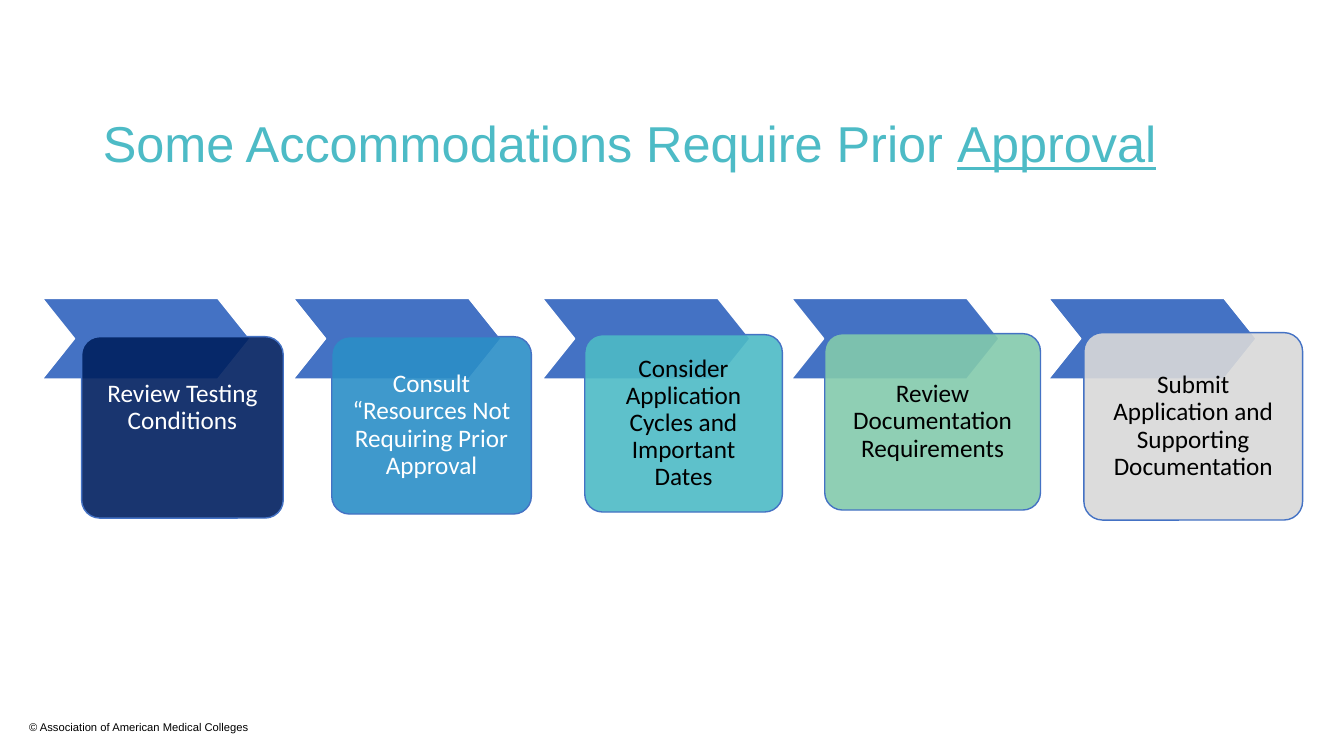
from lxml import etree
from pptx import Presentation
from pptx import util as u
from pptx.dml.color import RGBColor
from pptx.enum import shapes, text
from pptx.oxml.ns import qn

COLORS = {
    "teal": "4DBBC6", "blue": "4472C4", "navy": "002060", "sky": "2B8EC7",
    "green": "83CAAC", "grey": "D9D9D9", "white": "FFFFFF", "black": "000000",
}
CARD_INSET = 0.14
CHEVRON_TOP, CHEVRON_WIDTH, CHEVRON_HEIGHT = 2.96, 2.06, 0.8

# chevron left, card box, card colour, text colour, extra bottom inset, label
STEPS = [
    (0.42, (0.81, 3.34, 2.0, 1.8), "navy", "white", 0.38,
     "Review Testing Conditions"),
    (2.91, (3.29, 3.34, 1.98, 1.76), "sky", "white", 0,
     "Consult “Resources Not Requiring Prior Approval"),
    (5.38, (5.8, 3.32, 1.96, 1.76), "teal", "black", 0,
     "Consider Application Cycles and Important Dates"),
    (7.85, (8.18, 3.31, 2.14, 1.75), "green", "black", 0,
     "Review Documentation Requirements"),
    (10.4, (10.75, 3.3, 2.17, 1.86), "grey", "black", 0,
     "Submit Application and Supporting Documentation"),
]


def set_values(target, **values):
    for name, value in values.items():
        setattr(target, name, value)


class SlideBuilder:
    def __init__(self, slide):
        self.slide = slide

    def color(self, name):
        return RGBColor.from_string(COLORS[name])

    def place(self, shape, box):
        names = ("left", "top", "width", "height")
        set_values(shape, **dict(zip(names, map(u.Inches, box))))

    def style_font(self, font, color, **values):
        set_values(font, **values)
        font.color.rgb = self.color(color)

    def title(self, box, *runs):
        """Fill the title placeholder from (words, underline) pairs."""
        title = self.slide.shapes.title
        self.place(title, box)
        set_values(title.text_frame, word_wrap=True,
                   vertical_anchor=text.MSO_ANCHOR.MIDDLE)
        paragraph = title.text_frame.paragraphs[0]
        set_values(paragraph, alignment=text.PP_ALIGN.LEFT, line_spacing=0.9)
        for words, underline in runs:
            run = paragraph.add_run()
            run.text = words
            self.style_font(run.font, "teal", name="Arial", size=u.Pt(36),
                            underline=underline)

    def label(self, box, words):
        label = self.slide.shapes.add_textbox(*map(u.Inches, box))
        label.text_frame.word_wrap = True
        paragraph = label.text_frame.paragraphs[0]
        paragraph.text = words
        self.style_font(paragraph.font, "black", name="Arial", size=u.Pt(8))

    def shape(self, kind, box, adjustment, fill, line):
        shape = self.slide.shapes.add_shape(kind, *map(u.Inches, box))
        shape.adjustments[0] = adjustment
        shape.shadow.inherit = False
        shape.fill.solid()
        shape.fill.fore_color.rgb = self.color(fill)
        shape.line.color.rgb = self.color(line)
        shape.line.width = u.Pt(1)
        return shape

    def chevron(self, left):
        box = (left, CHEVRON_TOP, CHEVRON_WIDTH, CHEVRON_HEIGHT)
        self.shape(shapes.MSO_SHAPE.CHEVRON, box, 0.4, "blue", "white")

    def card(self, box, fill, text_color, extra_bottom, words):
        """Add a slightly see-through rounded card with centred text."""
        card = self.shape(shapes.MSO_SHAPE.ROUNDED_RECTANGLE, box, 0.1,
                          fill, "blue")
        fill_color = card._element.spPr.find(qn("a:solidFill"))[0]
        etree.SubElement(fill_color, qn("a:alpha"), val="90000")
        inset = u.Inches(CARD_INSET)
        set_values(card.text_frame, word_wrap=True,
                   vertical_anchor=text.MSO_ANCHOR.MIDDLE,
                   margin_left=inset, margin_right=inset, margin_top=inset,
                   margin_bottom=u.Inches(CARD_INSET + extra_bottom))
        paragraph = card.text_frame.paragraphs[0]
        paragraph.text = words
        set_values(paragraph, alignment=text.PP_ALIGN.CENTER, line_spacing=0.9)
        self.style_font(paragraph.font, text_color, name="Calibri",
                        size=u.Pt(18))


def main():
    presentation = Presentation()
    presentation.slide_width = u.Inches(13.33)
    presentation.slide_height = u.Inches(7.5)
    title_only = presentation.slide_layouts[5]
    builder = SlideBuilder(presentation.slides.add_slide(title_only))

    builder.label((0.19, 7.1, 5.37, 0.24),
                  "© Association of American Medical Colleges")
    builder.title((0.92, 0.73, 11.5, 1.45),
                  ("Some Accommodations Require Prior ", None),
                  ("Approval", True))
    for chevron_left, *card in STEPS:
        builder.chevron(chevron_left)
        builder.card(*card)
    presentation.save("out.pptx")


if __name__ == "__main__":
    main()
